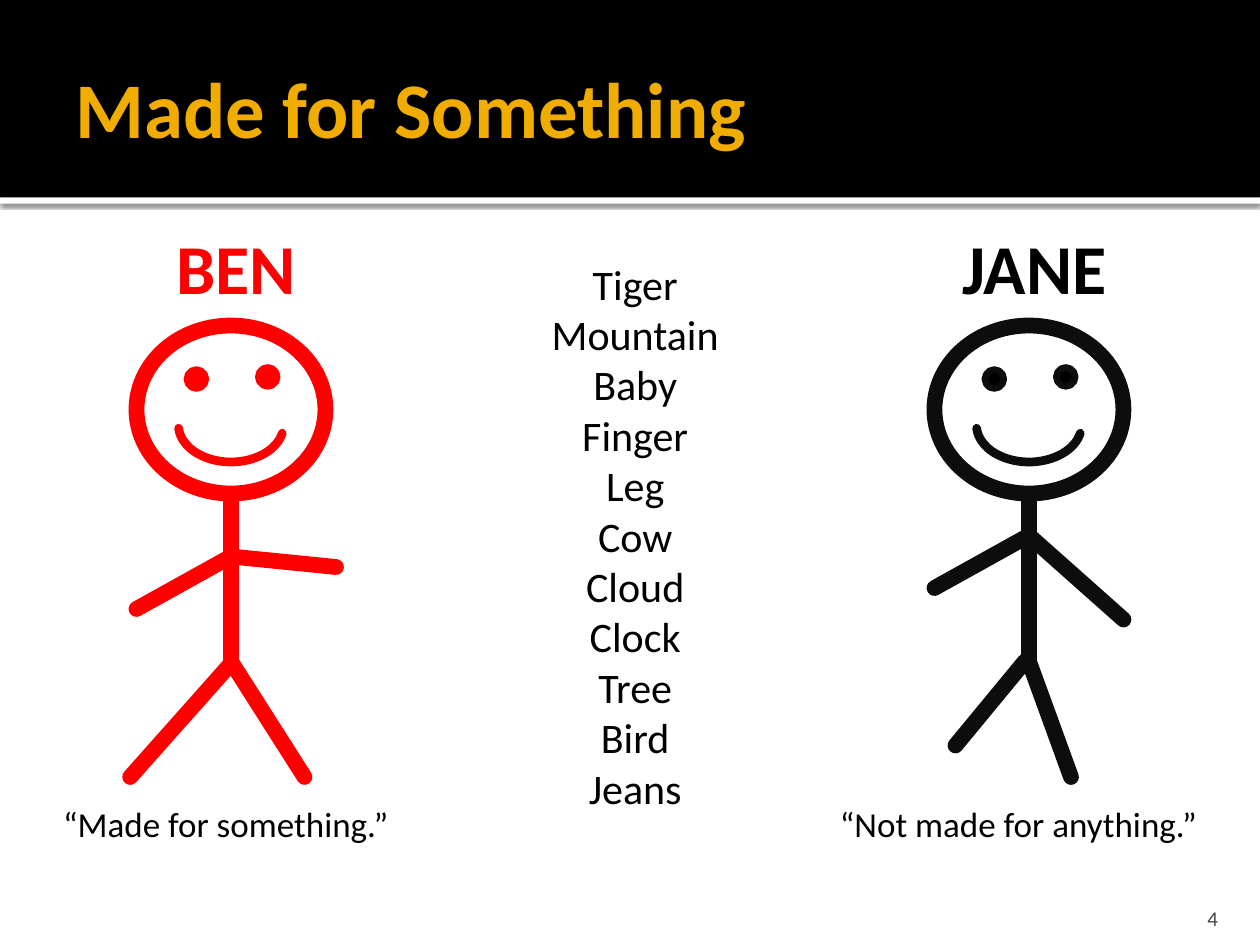
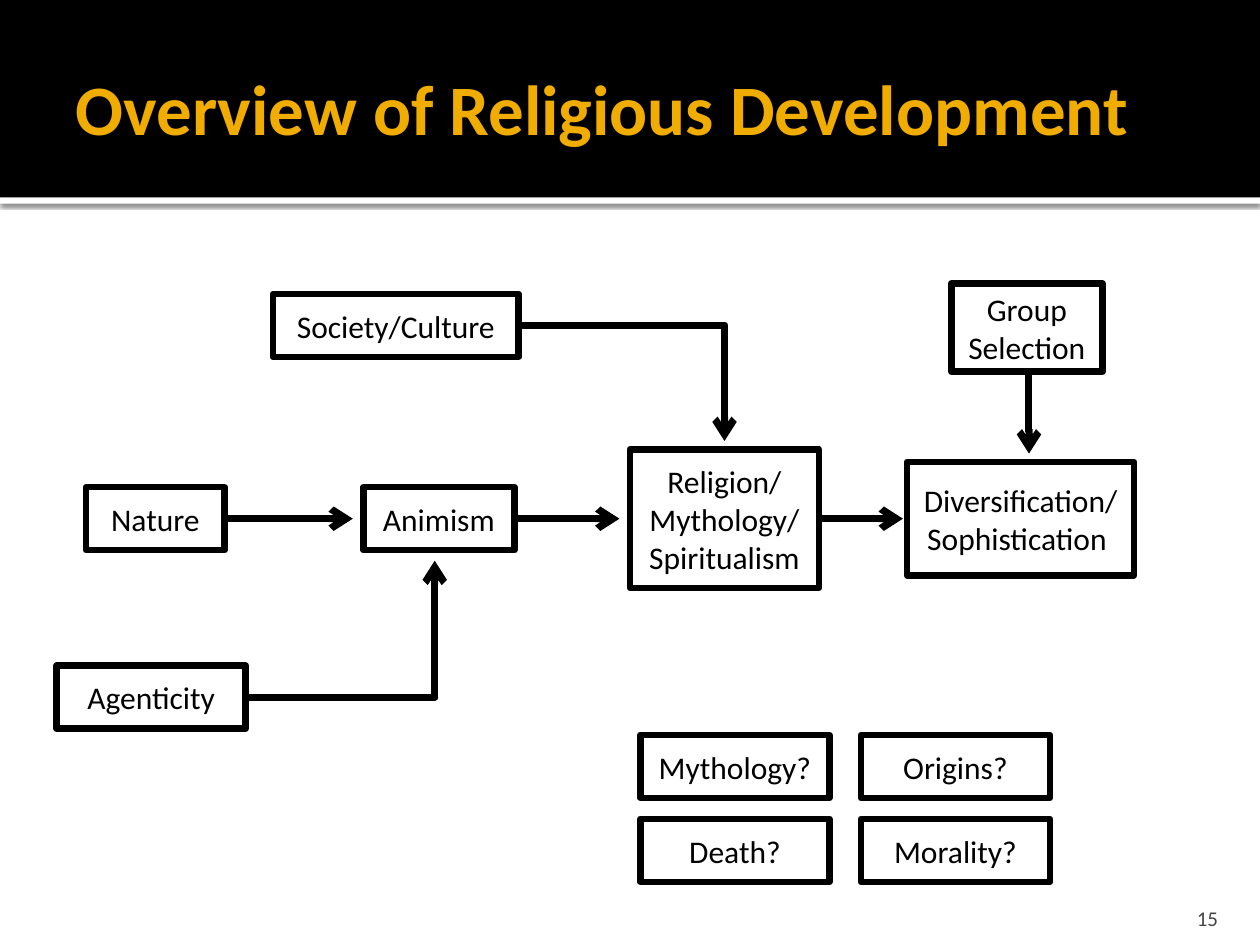
"""Build two slides: stick figures made for something, and a flow chart of religious development."""
from lxml import etree
from pptx import Presentation
from pptx.dml.color import RGBColor
from pptx.enum.shapes import MSO_CONNECTOR, MSO_SHAPE
from pptx.enum.text import MSO_ANCHOR, MSO_AUTO_SIZE, PP_ALIGN
from pptx.oxml import parse_xml
from pptx.oxml.ns import nsdecls, qn
from pptx.util import Inches, Pt

STRAIGHT = MSO_CONNECTOR.STRAIGHT
RECTANGLE, OVAL, ARC = MSO_SHAPE.RECTANGLE, MSO_SHAPE.OVAL, MSO_SHAPE.ARC
TOP, MIDDLE, BOTTOM = MSO_ANCHOR.TOP, MSO_ANCHOR.MIDDLE, MSO_ANCHOR.BOTTOM
LEFT, CENTER, RIGHT = PP_ALIGN.LEFT, PP_ALIGN.CENTER, PP_ALIGN.RIGHT
NO_AUTOFIT = MSO_AUTO_SIZE.NONE

BLACK = RGBColor(0x00, 0x00, 0x00)
WHITE = RGBColor(0xFF, 0xFF, 0xFF)
RED = RGBColor(0xFF, 0x00, 0x00)
INK = RGBColor(0x0D, 0x0D, 0x0D)
GOLD = RGBColor(0xF0, 0xAD, 0x00)
GRAY = RGBColor(0x45, 0x45, 0x45)

FONT = "Calibri"
COLUMNS, ROWS = 120, 90
CELL = Inches(10) // COLUMNS


def write(shape, text, size=18, color=BLACK, bold=False, align=CENTER, anchor=TOP, right=0.1, bottom=0.05):
    frame = shape.text_frame
    frame.word_wrap = True
    frame.auto_size = NO_AUTOFIT
    frame.vertical_anchor = anchor
    frame.margin_left, frame.margin_top = Inches(0.1), Inches(0.05)
    frame.margin_right, frame.margin_bottom = Inches(right), Inches(bottom)
    frame.text = text
    for paragraph in frame.paragraphs:
        paragraph.alignment = align
        font = paragraph.runs[0].font
        font.name, font.size, font.bold = FONT, Pt(size), bold
        font.color.rgb = color


def draw_outline(shape, color, width, arrow=False):
    shape.line.color.rgb = color
    shape.line.width = Pt(width)
    properties = shape.element.spPr
    outline = properties.find(qn("a:ln"))
    outline.set("cap", "rnd")
    etree.SubElement(outline, qn("a:round"))
    if arrow:
        etree.SubElement(outline, qn("a:tailEnd"), type="arrow")
    etree.SubElement(properties, qn("a:effectLst"))


presentation = Presentation()
presentation.slide_width, presentation.slide_height = COLUMNS * CELL, ROWS * CELL
layout = presentation.slide_layouts[5]

slides = []
for title, title_size, number in [
    ("Made for Something", 45, "4"),
    ("Overview of Religious Development", 40.5, "15"),
]:
    slide = presentation.slides.add_slide(layout)
    heading = slide.shapes.title
    heading.left, heading.top, heading.width, heading.height = [int(n * CELL) for n in (6, 2, 108, 16.4)]
    write(heading, title, size=title_size, color=GOLD, bold=True, align=LEFT, anchor=MIDDLE, right=0.05)
    page = slide.shapes.add_textbox(*[int(n * CELL) for n in (107.6, 85, 9.6, 3.6)])
    write(page, number, size=12, color=GRAY, align=RIGHT, anchor=BOTTOM, bottom=0)
    slides.append(slide)
figures_slide, flow_slide = slides

bands = []
for top, height, color in [(18.8, 0.6, WHITE), (0, 18.8, BLACK)]:
    band = figures_slide.shapes.add_shape(RECTANGLE, 0, int(top * CELL), COLUMNS * CELL, int(height * CELL))
    band.fill.solid()
    band.fill.fore_color.rgb = color
    band.line.fill.background()
    band.shadow.inherit = False
    bands.append(band)
bands[0].element.spPr.find(qn("a:effectLst")).append(parse_xml(
    f'<a:outerShdw {nsdecls("a")} blurRad="{Pt(2.5)}" dist="{Pt(0.8)}" dir="5400000" algn="t" rotWithShape="0">'
    '<a:srgbClr val="000000"><a:alpha val="60000"/></a:srgbClr></a:outerShdw>'
))
for position, band in enumerate(bands, start=2):
    band.element.nvSpPr.cNvPr.set("id", str(position + 20))
    layout.shapes.element.insert(position, band.element)

figures = [
    {
        "name": "BEN", "caption": "“Made for something.”", "center": 22, "caption_left": 3, "caption_width": 37,
        "color": RED, "name_color": RED,
        "limbs": [(0, 63.2, -9.6, 74), (0, 63, 7, 74), (0, 53, 10, 54), (-9, 58, 0, 53)],
    },
    {
        "name": "JANE", "caption": "“Not made for anything.”", "center": 98, "caption_left": 77, "caption_width": 40,
        "color": INK, "name_color": BLACK,
        "limbs": [(-0.4, 63, -7, 71), (0, 63, 4, 74), (0, 51, 9, 59), (-9, 56, 0, 51)],
    },
]
torso = (0, 47.4, 0, 63)
face = [
    (OVAL, -4.2, 35.2, 1.8, 1.8, 3.78),
    (OVAL, 2.6, 35, 1.8, 1.8, 3.78),
    (ARC, -5, 37, 10, 7, 5),
    (OVAL, -9, 31, 18, 16, 9),
]
for figure in figures:
    center, color = figure["center"], figure["color"]
    for x1, y1, x2, y2 in [torso, *figure["limbs"]]:
        ends = [int(n * CELL) for n in (center + x1, y1, center + x2, y2)]
        draw_outline(figures_slide.shapes.add_connector(STRAIGHT, *ends), color, 9)
    for kind, left, top, width, height, weight in face:
        box = [int(n * CELL) for n in (center + left, top, width, height)]
        feature = figures_slide.shapes.add_shape(kind, *box)
        if weight == 3.78:
            feature.fill.solid()
            feature.fill.fore_color.rgb = figure["name_color"]
        else:
            feature.fill.background()
        if kind == ARC:
            feature.adjustments[0], feature.adjustments[1] = 5.36, 106.01
        draw_outline(feature, color, weight)
    box = [int(n * CELL) for n in (center - 14, 20.8, 29, 9.2)]
    write(figures_slide.shapes.add_textbox(*box), figure["name"], size=40, color=figure["name_color"], bold=True)
    box = [int(n * CELL) for n in (figure["caption_left"], 75.8, figure["caption_width"], 5.3)]
    write(figures_slide.shapes.add_textbox(*box), figure["caption"], size=20)

words = ["Tiger", "Mountain", "Baby", "Finger", "Leg", "Cow", "Cloud", "Clock", "Tree", "Bird", "Jeans"]
word_list = figures_slide.shapes.add_textbox(*[int(n * CELL) for n in (40, 24, 41, 54.5)])
write(word_list, "\n".join(words), size=24)

MAIN_ROW = 49.4
flows = [
    (16.8, MAIN_ROW, 33.6, MAIN_ROW, True),
    (47, MAIN_ROW, 59, MAIN_ROW, True),
    (74, MAIN_ROW, 86, MAIN_ROW, True),
    (98, 30, 98, 43.2, True),
    (12.4, 66.4, 41.4, 66.4, False),
    (41.4, 66.4, 41.4, 53.4, True),
    (49.8, 31, 69, 31, False),
    (69, 31, 69, 42, True),
]
for *ends, arrow in flows:
    connector = flow_slide.shapes.add_connector(STRAIGHT, *[int(n * CELL) for n in ends])
    draw_outline(connector, BLACK, 4, arrow)

stages = [
    ("Nature", 8.2, MAIN_ROW - 3, 13.2, 6),
    ("Animism", 34.6, MAIN_ROW - 3, 14.4, 6),
    ("Religion/\nMythology/\nSpiritualism", 60, MAIN_ROW - 6.6, 18, 13.2),
    ("Diversification/Sophistication ", 86.4, MAIN_ROW - 5.4, 21.6, 10.8),
    ("Agenticity", 5.4, 63.4, 18, 6),
    ("Society/Culture", 26, 28, 23.4, 6),
    ("Group Selection", 90.6, 27, 14.4, 8.4),
]
for index, question in enumerate(["Mythology?", "Origins?", "Death?", "Morality?"]):
    row, column = divmod(index, 2)
    stages.append((question, 61 + 21 * column, 70 + 8 * row, 18, 6))
for text, *box in stages:
    stage = flow_slide.shapes.add_shape(RECTANGLE, *[int(n * CELL) for n in box])
    stage.fill.solid()
    stage.fill.fore_color.rgb = WHITE
    draw_outline(stage, BLACK, 3.78)
    write(stage, text, anchor=MIDDLE)

presentation.save("out.pptx")
